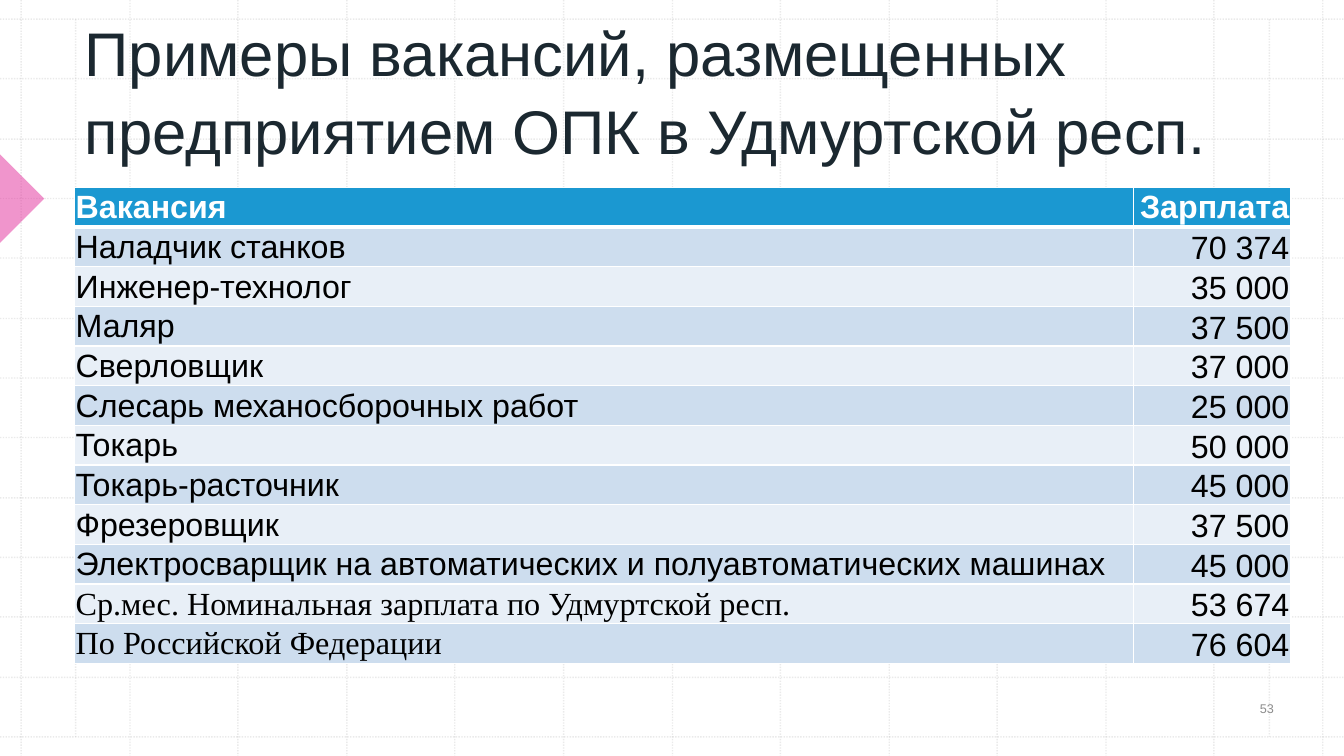
from lxml import etree
from pptx import Presentation
from pptx import util as u
from pptx.dml.color import RGBColor
from pptx.enum import dml, shapes, text
from pptx.oxml.ns import qn

PX = 9144  # EMU in one px, 100 px to the inch
WIDE, HIGH = 1333, 750
LEFT, RIGHT, CENTER, JUST = (text.PP_ALIGN.LEFT, text.PP_ALIGN.RIGHT,
                             text.PP_ALIGN.CENTER, text.PP_ALIGN.JUSTIFY)
MID, LOW = text.MSO_ANCHOR.MIDDLE, text.MSO_ANCHOR.BOTTOM

ROWS = [
    ("Вакансия", "Зарплата"),
    ("Наладчик станков", "70 374"),
    ("Инженер-технолог", "35 000"),
    ("Маляр", "37 500"),
    ("Сверловщик", "37 000"),
    ("Слесарь механосборочных работ", "25 000"),
    ("Токарь", "50 000"),
    ("Токарь-расточник", "45 000"),
    ("Фрезеровщик", "37 500"),
    ("Электросварщик на автоматических и полуавтоматических машинах", "45 000"),
    ("Ср.мес. Номинальная зарплата по Удмуртской респ.", "53 674"),
    ("По Российской Федерации", "76 604"),
]
MEANS = len(ROWS) - 2  # first of the two rows with average pay


def px(*nums):
    return [u.Emu(n * PX) for n in nums]


def rgb(code):
    return RGBColor.from_string(code)


def fade(fill, share):
    """Set the opacity of a solid fill, in percent."""
    tint = fill._xPr.find(qn("a:solidFill"))[0]
    etree.SubElement(tint, qn("a:alpha"), val=str(share * 1000))


class Deck:
    font, serif = "Arial", "Times New Roman"
    ink, grid, pink, grey = "1B2830", "BCBCBC", "E32D9B", "8C8C8C"
    head, bands = "1B98D1", ("E8EFF7", "CDDDEE")

    def __init__(self):
        self.prs = Presentation()
        self.prs.slide_width, self.prs.slide_height = px(WIDE, HIGH)
        self.slide = self.prs.slides.add_slide(self.prs.slide_layouts[5])
        self.items = self.slide.shapes

    def put(self, para, words, size, color, align=LEFT, font=None, bold=False):
        para.alignment = align
        run = para.add_run()
        run.text = words
        run.font.name, run.font.size = font or self.font, u.Pt(size)
        run.font.bold, run.font.color.rgb = bold, rgb(color)

    def line(self, *ends):
        rule = self.items.add_connector(shapes.MSO_CONNECTOR.STRAIGHT, *px(*ends))
        rule.line.width = u.Pt(1)
        rule.line.color.rgb = rgb(self.grid)
        rule.line.dash_style = dml.MSO_LINE.ROUND_DOT
        fade(rule.line.fill, 30)
        etree.SubElement(rule._element.spPr, qn("a:effectLst"))

    def wedge(self, *box):
        mark = self.items.add_shape(shapes.MSO_SHAPE.RIGHT_TRIANGLE, *px(*box))
        mark.rotation = 225
        mark.shadow.inherit = False
        mark.fill.solid()
        mark.fill.fore_color.rgb = rgb(self.pink)
        fade(mark.fill, 50)
        mark.line.fill.background()

    def title(self, words, *box):
        top = self.items.title
        self.items._spTree.append(top._element)  # bring in front of the grid
        top.left, top.top, top.width, top.height = px(*box)
        frame = top.text_frame
        frame.word_wrap, frame.auto_size = True, text.MSO_AUTO_SIZE.NONE
        frame.vertical_anchor = LOW
        frame.paragraphs[0].line_spacing = 1.06
        self.put(frame.paragraphs[0], words, 44, self.ink)

    def label(self, words, *box):
        frame = self.items.add_textbox(*px(*box)).text_frame
        frame.word_wrap, frame.vertical_anchor = True, MID
        self.put(frame.paragraphs[0], words, 9, self.grey, CENTER)

    def edge(self, cell, side, width):
        """Add one white border; borders stand before the cell fill."""
        props = cell._tc.get_or_add_tcPr()
        rule = etree.Element(qn("a:ln" + side), w=str(u.Pt(width)))
        fill = etree.SubElement(rule, qn("a:solidFill"))
        etree.SubElement(fill, qn("a:srgbClr"), val="FFFFFF")
        props.insert(len(props) - 1, rule)

    def cell(self, cell, words, row, col):
        first = row == 0
        cell.fill.solid()
        cell.fill.fore_color.rgb = rgb(self.head if first else self.bands[row % 2])
        for side in "LRTB":
            thick = (row, side) in ((0, "B"), (1, "T"))
            self.edge(cell, side, 3 if thick else 1)
        cell.margin_left, cell.margin_right, cell.margin_top = px(1, 1, 1)
        cell.margin_bottom = 0
        cell.vertical_anchor = LOW if col and not first else MID
        align = RIGHT if col else LEFT if first else JUST
        font = self.serif if row >= MEANS and not col else self.font
        self.put(cell.text_frame.paragraphs[0], words, 23,
                 "FFFFFF" if first else "000000", align, font, first)

    def table(self, rows, left, top, widths, high):
        box = px(left, top, sum(widths), high * len(rows))
        table = self.items.add_table(len(rows), len(widths), *box).table
        table.horz_banding = False
        for col, width in zip(table.columns, px(*widths)):
            col.width = width
        for r, row in enumerate(rows):
            for c, words in enumerate(row):
                self.cell(table.cell(r, c), words, r, c)


def main():
    deck = Deck()

    # Background grid: 13 lines each way, then the side margins
    for i in range(13):
        x, y = 21 + round(i * 1291 / 12), 19 + round(i * 712 / 12)
        deck.line(x, 0, x, HIGH)
        deck.line(0, y, WIDE, y)
    for x in (75, 1259):
        deck.line(x, 19, x, 731)

    # Side marker, title and page number
    deck.wedge(-31, 166, 62, 62)
    deck.title("Примеры вакансий, размещенных предприятием ОПК в Удмуртской респ.",
               74, 13, 1243, 158)
    deck.label("53", 1203, 680, 107, 46)

    # Vacancies and pay
    deck.table(ROWS, 74, 186, (1050, 156), 37)
    deck.prs.save("out.pptx")


if __name__ == "__main__":
    main()
